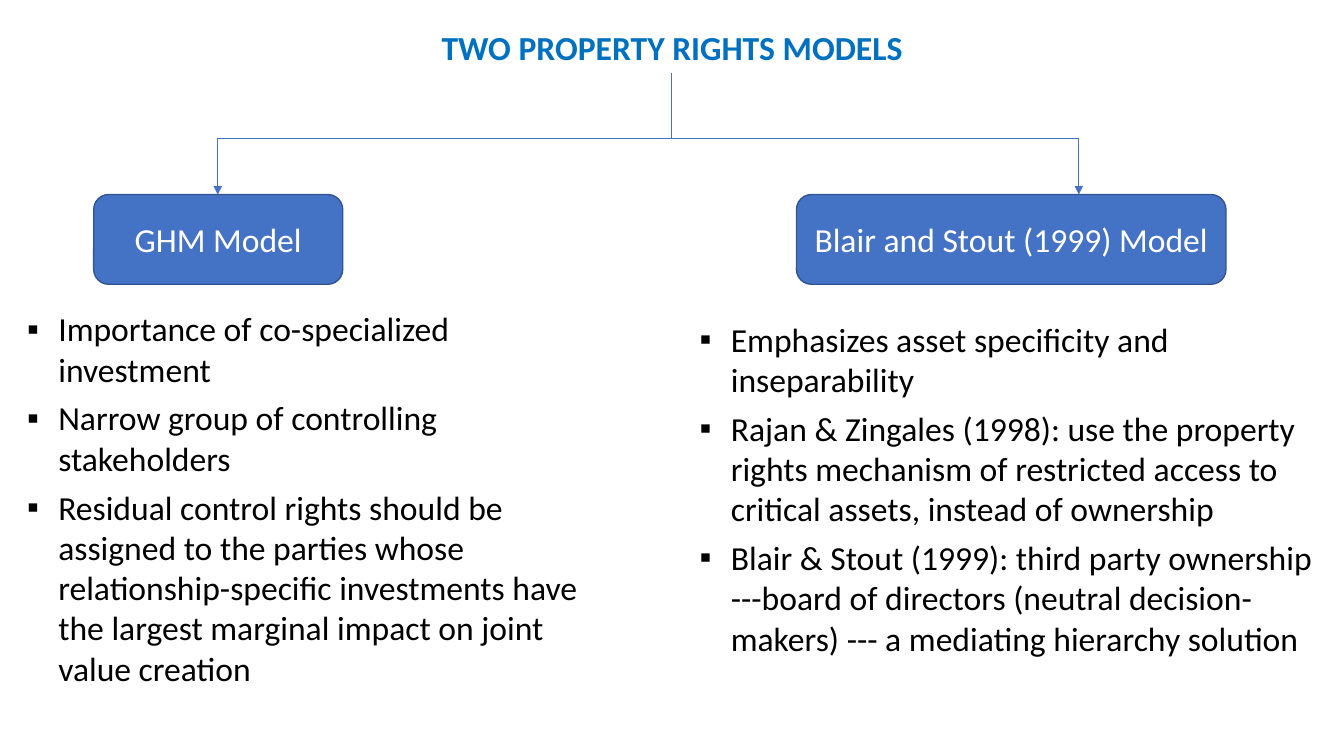
from lxml import etree
from pptx import Presentation
from pptx.dml.color import RGBColor
from pptx.enum.shapes import MSO_CONNECTOR, MSO_SHAPE
from pptx.enum.text import MSO_ANCHOR, PP_ALIGN
from pptx.oxml.ns import qn
from pptx.util import Emu, Pt

# Content: lengths in px, 100 px to the inch
TITLE = "TWO PROPERTY RIGHTS MODELS"
TITLE_BOX = (284, 22, 765, 50)
MODELS = [
    {
        "name": "GHM Model",
        "left": 93, "width": 247, "arrow_x": 216,
        "points_box": (17, 301, 579, 390),
        "points": [
            "Importance of co-specialized investment",
            "Narrow group of controlling stakeholders",
            "Residual control rights should be assigned to the parties whose "
            "relationship-specific investments have the largest marginal impact "
            "on joint value creation",
        ],
    },
    {
        "name": "Blair and Stout (1999) Model",
        "left": 790, "width": 426, "arrow_x": 1070,
        "points_box": (684, 311, 632, 350),
        "points": [
            "Emphasizes asset specificity and inseparability",
            "Rajan & Zingales (1998): use the property rights mechanism of "
            "restricted access to critical assets, instead of ownership",
            "Blair & Stout (1999): third party ownership ---board of directors "
            "(neutral decision-makers) --- a mediating hierarchy solution",
        ],
    },
]
STEM_X = 666
STEM_TOP, BRANCH_Y, MODEL_TOP = 72, 137, 193
MODEL_HEIGHT = 89
BULLET_INDENT = 31

FONT = "Calibri"
TITLE_BLUE = RGBColor(0x00, 0x70, 0xC0)
BLUE = RGBColor(0x44, 0x72, 0xC4)
DARK_BLUE = RGBColor(0x32, 0x54, 0x91)
WHITE = RGBColor(0xFF, 0xFF, 0xFF)
BLACK = RGBColor(0x00, 0x00, 0x00)

STRAIGHT = MSO_CONNECTOR.STRAIGHT
ROUNDED = MSO_SHAPE.ROUNDED_RECTANGLE
CENTER = PP_ALIGN.CENTER
MIDDLE = MSO_ANCHOR.MIDDLE


def px(length):
    return Emu(length * 9144)


def write(paragraph, text, color, bold=False):
    paragraph.text = text
    font = paragraph.runs[0].font
    font.name, font.size, font.bold = FONT, Pt(24), bold
    font.color.rgb = color


def add_text_box(slide, box):
    text_frame = slide.shapes.add_textbox(*map(px, box)).text_frame
    text_frame.word_wrap = True
    return text_frame


def add_line(slide, start, end, arrow=False):
    connector = slide.shapes.add_connector(STRAIGHT, *map(px, start + end))
    connector.line.color.rgb = BLUE
    connector.line.width = Pt(0.5)
    if arrow:
        etree.SubElement(connector.line._get_or_add_ln(), qn("a:tailEnd"), type="triangle")
    etree.SubElement(connector._element.spPr, qn("a:effectLst"))


def add_model_box(slide, model):
    shape = slide.shapes.add_shape(
        ROUNDED, px(model["left"]), px(MODEL_TOP), px(model["width"]), px(MODEL_HEIGHT))
    shape.shadow.inherit = False
    shape.fill.solid()
    shape.fill.fore_color.rgb = BLUE
    shape.line.color.rgb = DARK_BLUE
    shape.line.width = Pt(1)
    text_frame = shape.text_frame
    text_frame.word_wrap = True
    text_frame.vertical_anchor = MIDDLE
    paragraph = text_frame.paragraphs[0]
    write(paragraph, model["name"], WHITE)
    paragraph.alignment = CENTER


def add_points(slide, model):
    text_frame = add_text_box(slide, model["points_box"])
    for index, point in enumerate(model["points"]):
        paragraph = text_frame.add_paragraph() if index else text_frame.paragraphs[0]
        write(paragraph, point, BLACK)
        paragraph.space_before = Pt(6)
        properties = paragraph._p.get_or_add_pPr()
        properties.set("marL", str(px(BULLET_INDENT)))
        properties.set("indent", str(px(-BULLET_INDENT)))
        etree.SubElement(properties, qn("a:buFont"), typeface="Arial")
        etree.SubElement(properties, qn("a:buChar"), char="▪")


def main():
    presentation = Presentation()
    presentation.slide_width, presentation.slide_height = px(1333), px(750)
    slide = presentation.slides.add_slide(presentation.slide_layouts[6])

    # Title
    title = add_text_box(slide, TITLE_BOX).paragraphs[0]
    write(title, TITLE, TITLE_BLUE, bold=True)
    title.alignment = CENTER

    # Tree lines from the title to both models
    arrow_xs = [model["arrow_x"] for model in MODELS]
    add_line(slide, (STEM_X, STEM_TOP), (STEM_X, BRANCH_Y))
    add_line(slide, (arrow_xs[0], BRANCH_Y), (arrow_xs[-1], BRANCH_Y))
    for x in arrow_xs:
        add_line(slide, (x, BRANCH_Y), (x, MODEL_TOP), arrow=True)

    # Models and their points
    for model in MODELS:
        add_model_box(slide, model)
        add_points(slide, model)

    presentation.save("out.pptx")


if __name__ == "__main__":
    main()
